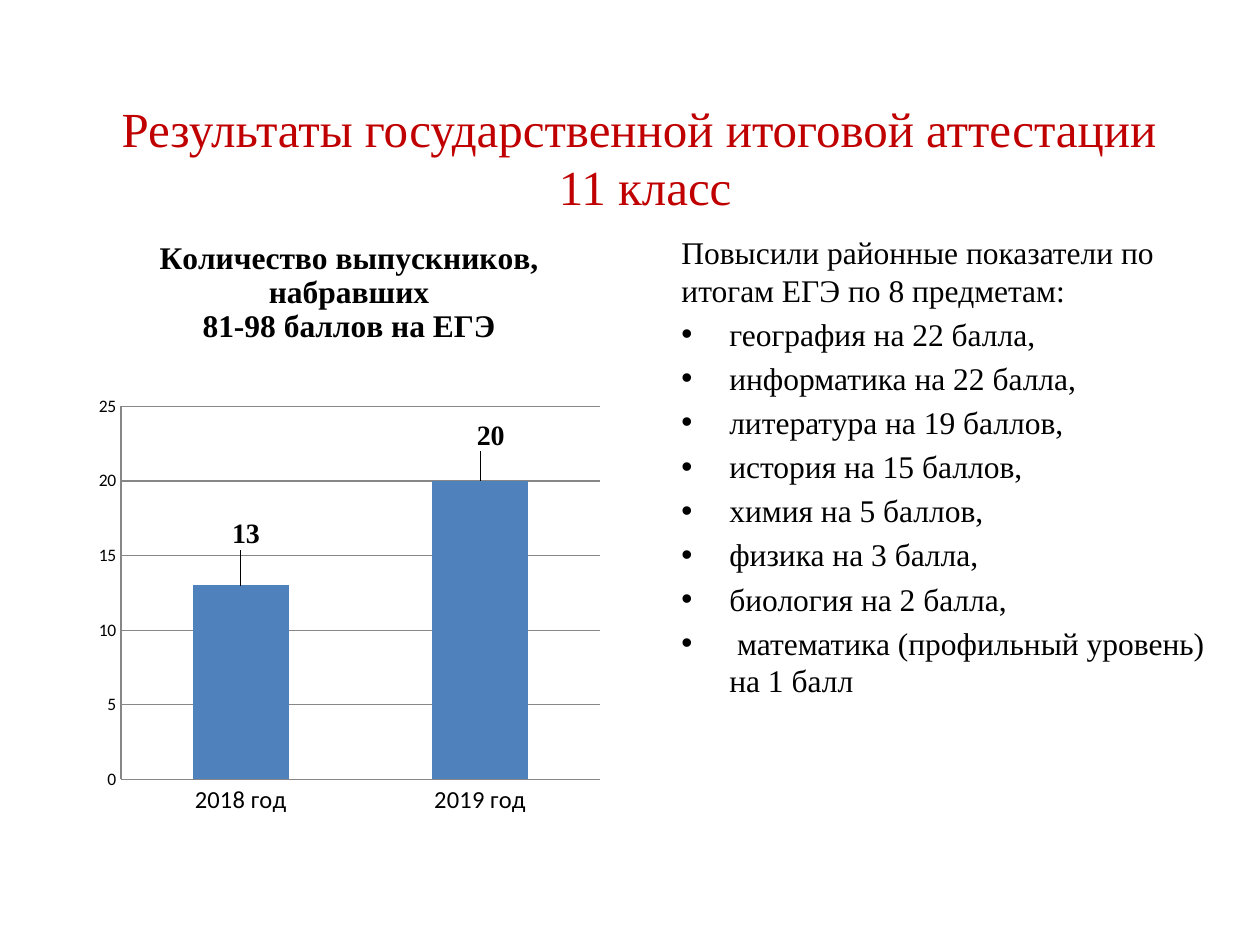
import pptx
import pptx.chart.data
import pptx.dml.color
import pptx.enum.chart
import pptx.enum.text
import pptx.oxml
import pptx.oxml.ns
import pptx.util

RED = pptx.dml.color.RGBColor(0xC0, 0x00, 0x00)
BLACK = pptx.dml.color.RGBColor(0x00, 0x00, 0x00)
BLUE = pptx.dml.color.RGBColor(0x4F, 0x81, 0xBD)
GRAY = pptx.dml.color.RGBColor(0x87, 0x87, 0x87)
SERIF = "Times New Roman"
SANS = "Calibri"
COLUMNS, ROWS = 100, 75

SUBJECTS = [
    "география на 22 балла,",
    "информатика на 22 балла,",
    "литература на 19 баллов,",
    "история на 15 баллов,",
    "химия на 5 баллов,",
    "физика на 3 балла,",
    "биология на 2 балла,",
    " математика (профильный уровень) на 1 балл",
]
GRADUATES = {"2018 год": 13, "2019 год": 20}
LABEL_SHIFTS = [(0.01, -0.05), (0.02, -0.04)]


def set_format(target, values):
    for name, value in values.items():
        if name == "color":
            target.color.rgb = value
        else:
            setattr(target, name, value)


def font_values(size, name=SERIF, color=BLACK, bold=False):
    return {"size": pptx.util.Pt(size), "name": name, "color": color, "bold": bold}


def manual_layout(**values):
    """Return a c:layout element; the values are shares of the chart's size."""
    parts = "".join(f'<c:{name} val="{value}"/>' for name, value in values.items())
    return pptx.oxml.parse_xml(
        f'<c:layout {pptx.oxml.ns.nsdecls("c")}>'
        f"<c:manualLayout>{parts}</c:manualLayout></c:layout>"
    )


class SlideBuilder:
    """Holds the style and the current slide; places are in grid columns and rows."""

    def __init__(self, deck):
        self.column = deck.slide_width / COLUMNS
        self.row = deck.slide_height / ROWS
        self.slide = deck.slides.add_slide(deck.slide_layouts[6])

    def place(self, left, top, width, height):
        return (
            round(left * self.column),
            round(top * self.row),
            round(width * self.column),
            round(height * self.row),
        )

    def text_frame(self, area, anchor):
        frame = self.slide.shapes.add_textbox(*self.place(*area)).text_frame
        set_format(frame, {"word_wrap": True, "vertical_anchor": anchor})
        return frame

    def title(self, area, text):
        frame = self.text_frame(area, pptx.enum.text.MSO_ANCHOR.MIDDLE)
        para = frame.paragraphs[0]
        para.text = text
        para.alignment = pptx.enum.text.PP_ALIGN.CENTER
        set_format(para.font, font_values(28, color=RED))

    def bullet_list(self, area, heading, items):
        frame = self.text_frame(area, pptx.enum.text.MSO_ANCHOR.TOP)
        frame.text = heading
        set_format(frame.paragraphs[0].font, font_values(18))
        indent = pptx.util.Inches(0.38)
        for item in items:
            para = frame.add_paragraph()
            para.text = item
            para.space_before = pptx.util.Pt(3.6)
            properties = para._p.get_or_add_pPr()
            properties.set("marL", str(indent))
            properties.set("indent", str(-indent))
            for markup in ('<a:buFont {} typeface="Arial"/>', '<a:buChar {} char="•"/>'):
                properties.append(
                    pptx.oxml.parse_xml(markup.format(pptx.oxml.ns.nsdecls("a")))
                )
            set_format(para.font, font_values(18))

    def column_chart(self, area, title_lines, values, label_shifts):
        data = pptx.chart.data.CategoryChartData()
        data.categories = list(values)
        data.add_series("Количество", list(values.values()))
        kind = pptx.enum.chart.XL_CHART_TYPE.COLUMN_CLUSTERED
        chart = self.slide.shapes.add_chart(kind, *self.place(*area), data).chart
        chart.has_legend = False
        set_format(chart.font, font_values(10, SANS))

        chart.has_title = True
        chart.chart_title.include_in_layout = False
        title_frame = chart.chart_title.text_frame
        title_frame.text = "\n".join(title_lines)
        for para in title_frame.paragraphs:
            set_format(para.font, font_values(18, bold=True))

        plot_area = chart._chartSpace.chart.plotArea
        for old_layout in plot_area.findall(pptx.oxml.ns.qn("c:layout")):
            plot_area.remove(old_layout)
        plot_area.insert(0, manual_layout(
            layoutTarget="inner", xMode="edge", yMode="edge",
            x=0.063, y=0.311, w=0.918, h=0.612,
        ))

        no_tick = pptx.enum.chart.XL_TICK_MARK.NONE
        for axis, size in ((chart.category_axis, 14), (chart.value_axis, 10)):
            set_format(axis, {"major_tick_mark": no_tick, "minor_tick_mark": no_tick})
            set_format(axis.tick_labels.font, font_values(size, SANS))
            set_format(axis.format.line, {"color": GRAY, "width": pptx.util.Pt(0.75)})
        set_format(chart.value_axis, {
            "minimum_scale": 0, "maximum_scale": 25, "major_unit": 5,
            "has_major_gridlines": True,
        })
        gridline = chart.value_axis.major_gridlines.format.line
        set_format(gridline, {"color": GRAY, "width": pptx.util.Pt(0.75)})

        plot = chart.plots[0]
        set_format(plot, {"gap_width": 150, "vary_by_categories": False})
        series = plot.series[0]
        series.format.fill.solid()
        series.format.fill.fore_color.rgb = BLUE
        set_format(series.data_labels, {"show_value": True})
        set_format(series.data_labels.font, font_values(16, bold=True))
        for index, (x, y) in enumerate(label_shifts):
            label = series.points[index].data_label
            set_format(label.font, font_values(16, bold=True))
            label.position = pptx.enum.chart.XL_LABEL_POSITION.OUTSIDE_END
            element = series.data_labels._element.findall(pptx.oxml.ns.qn("c:dLbl"))[index]
            element.insert(1, manual_layout(x=x, y=y))


def main():
    deck = pptx.Presentation()
    deck.slide_width = pptx.util.Inches(10)
    deck.slide_height = pptx.util.Inches(7.5)
    builder = SlideBuilder(deck)
    builder.title(
        (6.2, 6.2, 90, 12.5),
        "Результаты государственной итоговой аттестации \v11 класс",
    )
    builder.bullet_list(
        (53.1, 18, 44.2, 41.9),
        "Повысили районные показатели по итогам ЕГЭ по 8 предметам:",
        SUBJECTS,
    )
    builder.column_chart(
        (7, 17.2, 41.4, 48.4),
        ["Количество выпускников,", "набравших", "81-98 баллов на ЕГЭ"],
        GRADUATES,
        LABEL_SHIFTS,
    )
    deck.save("out.pptx")


if __name__ == "__main__":
    main()
